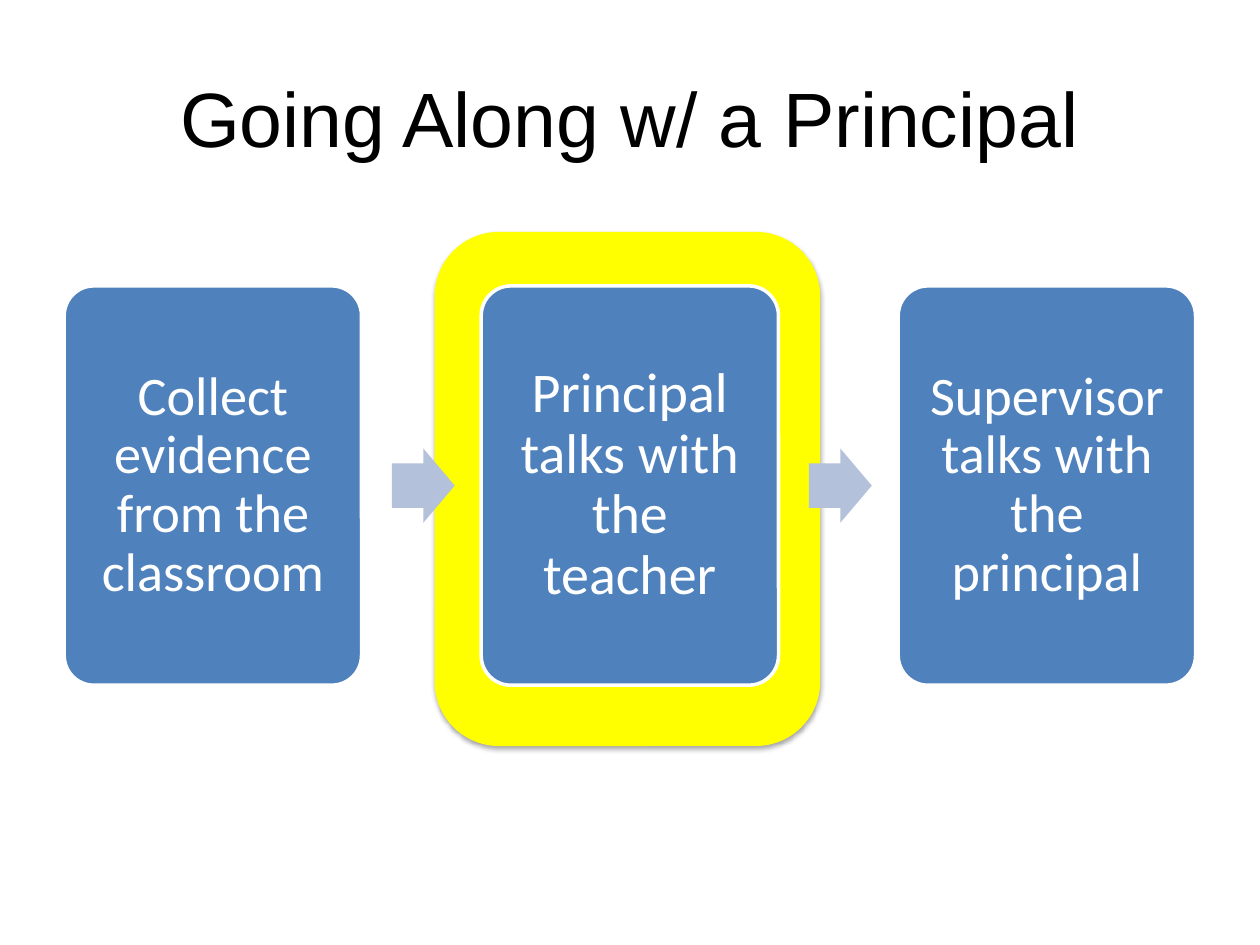
from lxml import etree
from pptx import Presentation
from pptx import util as u
from pptx.dml.color import RGBColor
from pptx.enum import shapes, text
from pptx.oxml import ns

STEPS = [
    ("Collect evidence from the classroom", 31),
    ("Principal talks with the teacher", 32),
    ("Supervisor talks with the principal", 31),
]
CARD_LEFT, CARD_TOP, CARD_WIDTH, CARD_HEIGHT = 36.7, 163.4, 169.9, 228.2
ARROW_WIDTH, ARROW_HEIGHT = 36, 42.5
STEP_PITCH = 238.3


def colour(code):
    return RGBColor.from_string(code)


def write(holder, words, size, font, ink, inset=7.2, spacing=1.0):
    frame = holder.text_frame
    frame.word_wrap = True
    frame.vertical_anchor = text.MSO_ANCHOR.MIDDLE
    frame.margin_left = frame.margin_right = u.Pt(inset)
    frame.margin_top = frame.margin_bottom = u.Pt(inset)
    paragraph = frame.paragraphs[0]
    paragraph.alignment = text.PP_ALIGN.CENTER
    paragraph.line_spacing = spacing
    run = paragraph.add_run()
    run.text = words
    run.font.size = u.Pt(size)
    run.font.name = font
    run.font.color.rgb = colour(ink)


class ProcessSlide:
    """Holds the slide and the style of its process diagram."""

    blue, pale, yellow, white, black = "4F81BD", "B3C1DB", "FFFF00", "FFFFFF", "000000"

    def __init__(self, slide):
        self.slide = slide

    def block(self, preset, left, top, width, height, fill, adjustments=()):
        block = self.slide.shapes.add_shape(
            preset, u.Pt(left), u.Pt(top), u.Pt(width), u.Pt(height))
        block.shadow.inherit = False
        block.fill.solid()
        block.fill.fore_color.rgb = colour(fill)
        block.line.fill.background()
        for index, value in enumerate(adjustments):
            block.adjustments[index] = value
        return block

    def title(self, words):
        heading = self.slide.shapes.add_textbox(u.Pt(36), u.Pt(21.6), u.Pt(648), u.Pt(90))
        write(heading, words, 44, "Arial", self.black, inset=3.6)

    def highlight(self, left, top, width, height):
        halo = self.block(shapes.MSO_SHAPE.ROUNDED_RECTANGLE,
                          left, top, width, height, self.yellow)
        effects = halo._element.spPr.find(ns.qn("a:effectLst"))
        shadow = etree.SubElement(
            effects, ns.qn("a:outerShdw"), blurRad=str(u.Pt(3.1)),
            dist=str(u.Pt(1.8)), dir="5400000", rotWithShape="0")
        shade = etree.SubElement(shadow, ns.qn("a:srgbClr"), val=self.black)
        etree.SubElement(shade, ns.qn("a:alpha"), val="35000")

    def card(self, left, words, size):
        card = self.block(shapes.MSO_SHAPE.ROUNDED_RECTANGLE, left, CARD_TOP,
                          CARD_WIDTH, CARD_HEIGHT, self.blue, [0.1])
        card.line.color.rgb = colour(self.white)
        card.line.width = u.Pt(2)
        write(card, words, size, "Calibri", self.white, inset=9.4, spacing=0.9)

    def arrow(self, left):
        top = CARD_TOP + (CARD_HEIGHT - ARROW_HEIGHT) / 2
        self.block(shapes.MSO_SHAPE.RIGHT_ARROW, left, top,
                   ARROW_WIDTH, ARROW_HEIGHT, self.pale, [0.6, 0.5])


def main():
    deck = Presentation()
    deck.slide_width, deck.slide_height = u.Pt(720), u.Pt(540)
    page = ProcessSlide(deck.slides.add_slide(deck.slide_layouts[6]))
    page.highlight(248.4, 132.5, 220.3, 293.8)
    page.title("Going Along w/ a Principal")
    for index, (words, size) in enumerate(STEPS):
        left = CARD_LEFT + index * STEP_PITCH
        if index:
            page.arrow(left - 51.1)
        page.card(left, words, size)
    deck.save("out.pptx")


if __name__ == "__main__":
    main()
